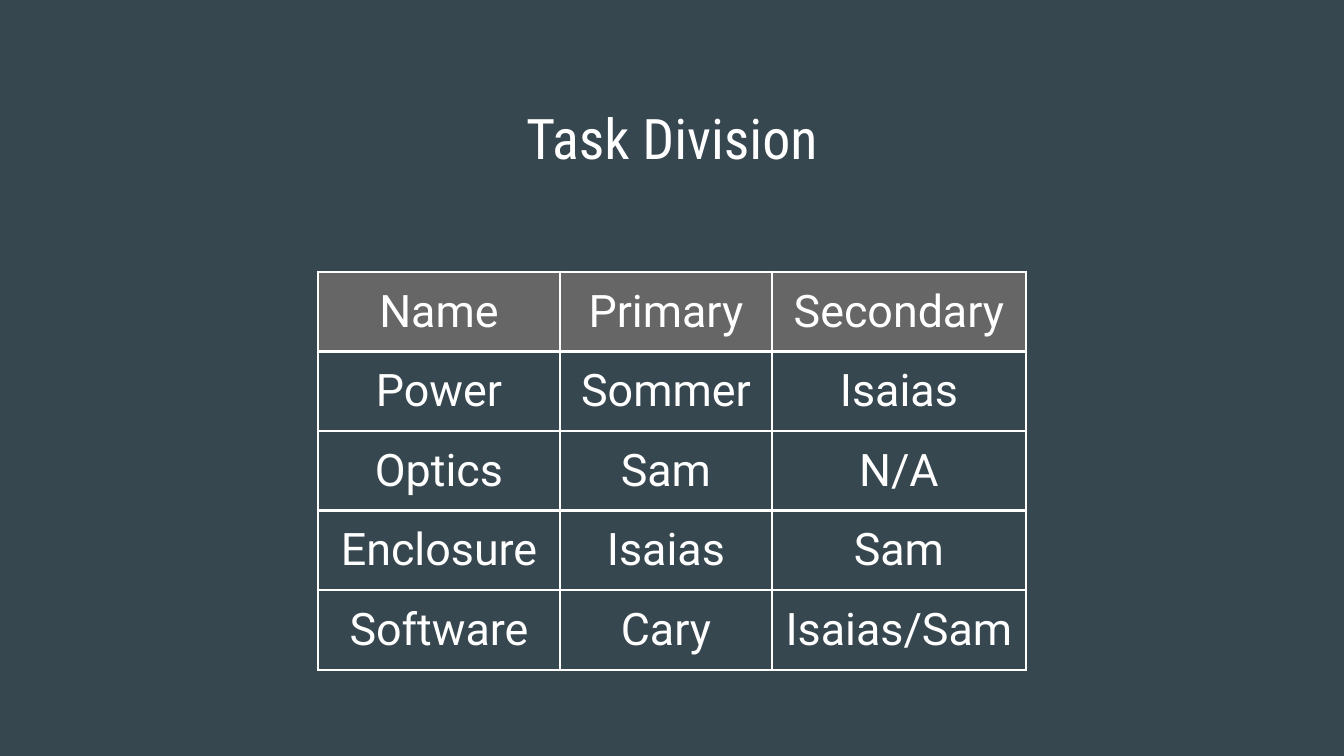
"""Build the task division slide: a centred title above a bordered table."""
from lxml import etree
from pptx import Presentation, util as u
from pptx.dml.color import RGBColor
from pptx.enum import text
from pptx.oxml import ns

PX = 914400 / 134.4
SLATE = RGBColor(0x37, 0x47, 0x4F)
GREY = RGBColor(0x66, 0x66, 0x66)
WHITE = RGBColor(0xFF, 0xFF, 0xFF)
INSET = u.Inches(0.1)
COLS = [242, 212, 254]
ROW = 57
TASKS = [
    ("Name", "Primary", "Secondary"),
    ("Power", "Sommer", "Isaias"),
    ("Optics", "Sam", "N/A"),
    ("Enclosure", "Isaias", "Sam"),
    ("Software", "Cary", "Isaias/Sam"),
]


def px(n):
    return u.Emu(round(n * PX))


def write(frame, words, font, size):
    frame.text = words
    para = frame.paragraphs[0]
    para.alignment = text.PP_ALIGN.CENTER
    para.font.name = font
    para.font.size = u.Pt(size)
    para.font.bold = False
    para.font.color.rgb = WHITE


def inset(box):
    box.margin_left = box.margin_right = INSET
    box.margin_top = box.margin_bottom = INSET
    box.vertical_anchor = text.MSO_ANCHOR.TOP


def border(cell):
    props = cell._tc.get_or_add_tcPr()
    for i, side in enumerate(("lnL", "lnR", "lnT", "lnB")):
        line = etree.Element(ns.qn("a:" + side), w=str(u.Pt(1.5)))
        fill = etree.SubElement(line, ns.qn("a:solidFill"))
        etree.SubElement(fill, ns.qn("a:srgbClr"), val=str(WHITE))
        props.insert(i, line)


def add_title(slide, words):
    title = slide.shapes.title
    title.left, title.top = px(46), px(90)
    title.width, title.height = px(1252), px(85)
    frame = title.text_frame
    inset(frame)
    frame.word_wrap = True
    frame.auto_size = text.MSO_AUTO_SIZE.NONE
    write(frame, words, "Roboto Condensed", 30)


def add_grid(slide, rows):
    grid = slide.shapes.add_table(
        len(rows), len(COLS), px(318), px(272),
        px(sum(COLS)), px(ROW * len(rows))).table
    for col, width in zip(grid.columns, COLS):
        col.width = px(width)
    for r, row in enumerate(rows):
        for c, words in enumerate(row):
            cell = grid.cell(r, c)
            inset(cell)
            write(cell.text_frame, words, "Roboto", 24)
            if r == 0:
                cell.fill.solid()
                cell.fill.fore_color.rgb = GREY
            else:
                cell.fill.background()
            border(cell)


def main():
    deck = Presentation()
    deck.slide_width, deck.slide_height = px(1344), px(756)
    slide = deck.slides.add_slide(deck.slide_layouts[5])
    back = slide.background.fill
    back.solid()
    back.fore_color.rgb = SLATE
    add_title(slide, "Task Division")
    add_grid(slide, TASKS)
    deck.save("out.pptx")


if __name__ == "__main__":
    main()
